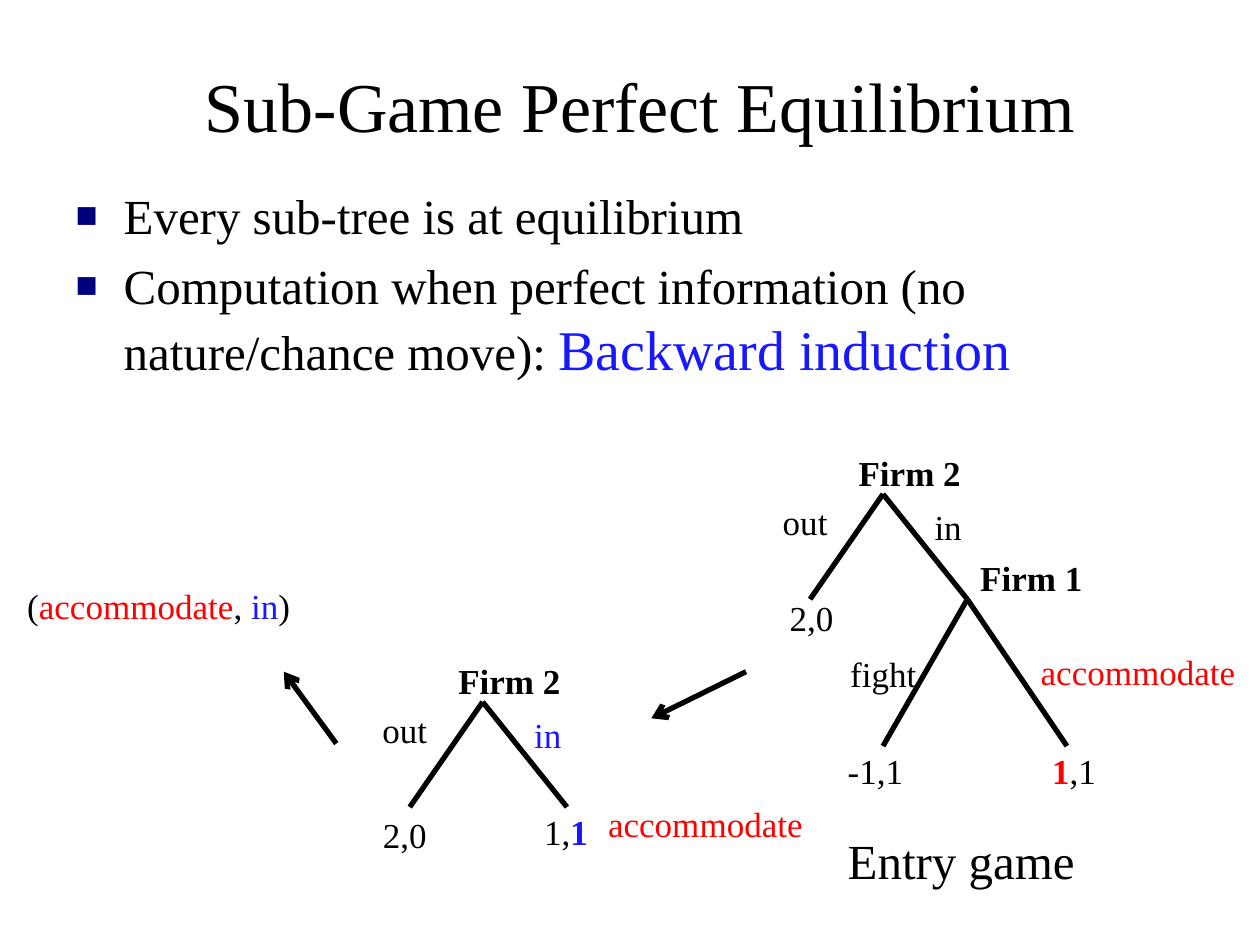
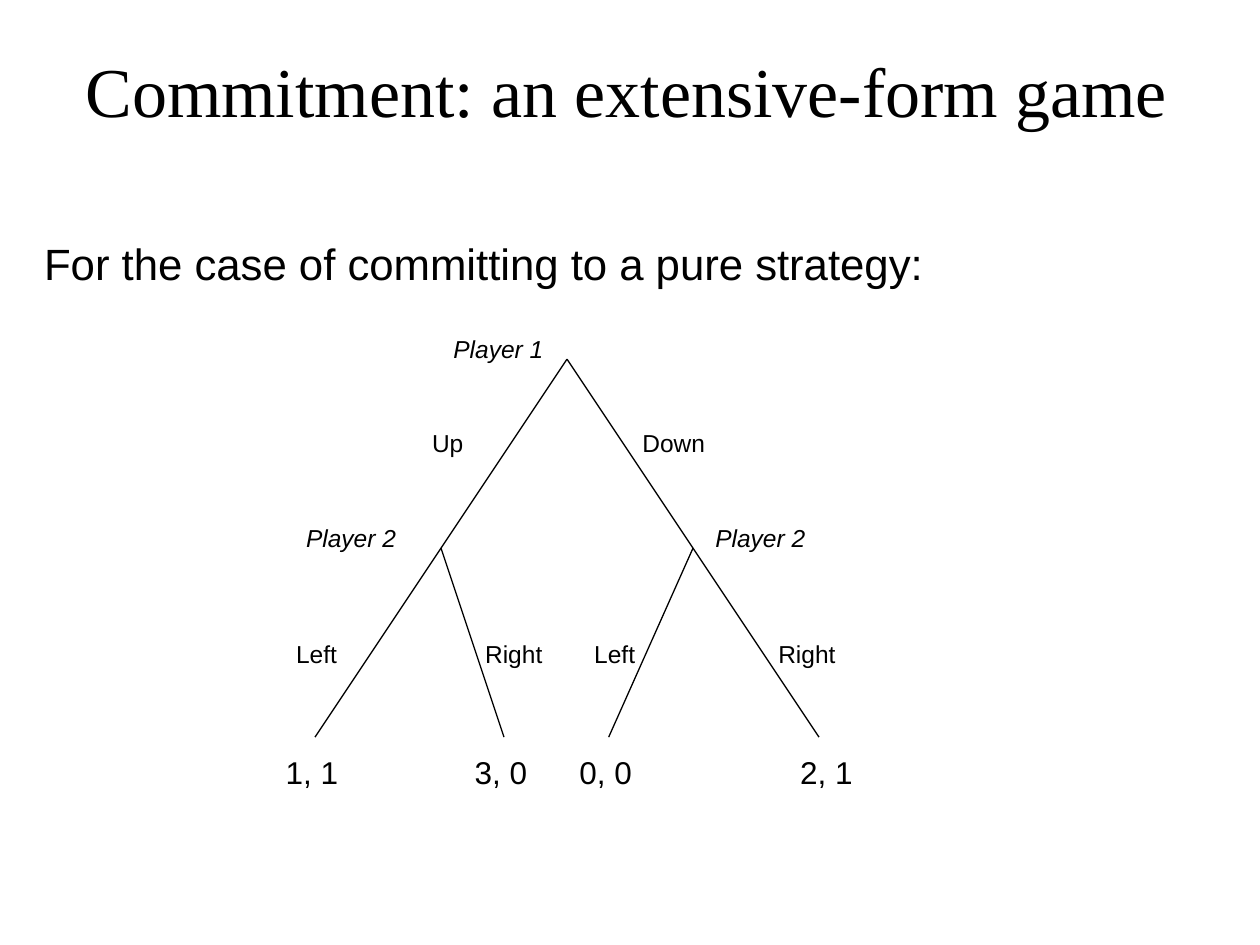
"""Build two slides on game trees: backward induction and commitment."""
from dataclasses import dataclass

from lxml import etree
from pptx import Presentation
from pptx.dml.color import RGBColor
from pptx.enum.shapes import MSO_CONNECTOR
from pptx.enum.text import MSO_ANCHOR, MSO_AUTO_SIZE, PP_ALIGN
from pptx.oxml.ns import qn
from pptx.util import Cm, Pt

STRAIGHT = MSO_CONNECTOR.STRAIGHT
MIDDLE, TOP = MSO_ANCHOR.MIDDLE, MSO_ANCHOR.TOP
LEFT, CENTER = PP_ALIGN.LEFT, PP_ALIGN.CENTER
NO_FIT = MSO_AUTO_SIZE.NONE


@dataclass(frozen=True)
class Theme:
    serif = "Times New Roman"
    sans = "Arial"
    black = "000000"
    red = "FF0000"
    blue = "1818FF"
    navy = "00007D"
    thick = 3
    thin = 0.75


THEME = Theme()
TITLE = {"name": THEME.serif, "size": Pt(40)}
BODY = {"name": THEME.serif, "size": Pt(28)}
TREE = {"name": THEME.serif, "size": Pt(20)}
STATEMENT = {"name": THEME.sans, "size": Pt(25)}
ACTION = {"name": THEME.sans, "size": Pt(14)}
PLAYER = {**ACTION, "italic": True}
PAYOFF = {"name": THEME.sans, "size": Pt(18)}
RED, BLUE, BOLD = {"color": THEME.red}, {"color": THEME.blue}, {"bold": True}

EQUILIBRIUM_TITLE = "Sub-Game Perfect Equilibrium"
EQUILIBRIUM_POINTS = [
    [("Every sub-tree is at equilibrium", {})],
    [("Computation when perfect information (no nature/chance move): ", {}),
     ("Backward induction", {**BLUE, "size": Pt(32)})],
]
FULL_ROOT, REDUCED_ROOT = (17.8, 9.96), (9.73, 14.15)
FIRM_1_NODE = (19.5, 12.08)
OUT_STEP, IN_STEP = (-1.47, 2.12), (1.7, 2.12)
FIGHT_STEP, ACCOMMODATE_STEP = (-1.7, 2.96), (2.01, 2.96)
ENTRY_LABELS = [
    ([("Firm 1", BOLD)], 19.51, 11.1, 2.59),
    ([("fight", {})], 16.89, 13.03, 1.85),
    ([("accommodate", RED)], 20.73, 12.98, 4.47),
    ([("2,0", {})], 15.67, 11.91, 1.4),
    ([("-1,1", {})], 16.84, 14.99, 1.65),
    ([("1", {**RED, **BOLD}), (",1", {})], 20.96, 14.99, 1.4),
    ([("2,0", {})], 7.47, 16.28, 1.4),
    ([("1,", {}), ("1", {**BLUE, **BOLD})], 10.72, 16.21, 1.4),
    ([("accommodate", RED)], 12.01, 16.05, 4.47),
    ([("(", {}), ("accommodate", RED), (", ", {}), ("in", BLUE), (")", {})],
     0.3, 11.66, 5.84),
]
INDUCTION_ARROWS = [((15.04, 13.54), (13.13, 14.48)),
                    ((6.78, 14.99), (5.72, 13.54))]

COMMITMENT_TITLE = "Commitment: an extensive-form game"
COMMITMENT_STATEMENT = "For the case of committing to a pure strategy:"
COMMITMENT_ROOT = (11.43, 7.24)
LEVEL_HEIGHT = 3.81
COMMITMENT_TREE = {8.89: (6.35, 10.16), 13.97: (12.27, 16.51)}
COMMITMENT_ROWS = [
    (PLAYER, 6.6, 2.54, [("Player 1", 8.89)]),
    (ACTION, 8.51, 1.9, [("Up", 8.46), ("Down", 12.7)]),
    (PLAYER, 10.41, 2.54, [("Player 2", 5.92), ("Player 2", 14.17)]),
    (ACTION, 12.75, 1.9, [("Left", 5.72), ("Right", 9.53),
                          ("Left", 11.73), ("Right", 15.44)]),
    (PAYOFF, 15.06, 2.54, [("1, 1", 5.51), ("3, 0", 9.32),
                           ("0, 0", 11.43), ("2, 1", 15.88)]),
]


def set_attributes(target, values):
    for name, value in values.items():
        setattr(target, name, value)


def place(shape, left, top, width, height):
    set_attributes(shape, {"left": Cm(left), "top": Cm(top),
                           "width": Cm(width), "height": Cm(height)})


def write(paragraph, runs, style):
    for text, changes in runs:
        values = {"color": THEME.black, **style, **changes}
        run = paragraph.add_run()
        run.text = text
        run.font.color.rgb = RGBColor.from_string(values.pop("color"))
        set_attributes(run.font, values)


def add_title(slide, text, box, alignment):
    title = slide.shapes.title
    place(title, *box)
    set_attributes(title.text_frame, {"auto_size": NO_FIT, "vertical_anchor": MIDDLE})
    paragraph = title.text_frame.paragraphs[0]
    paragraph.alignment = alignment
    write(paragraph, [(text, {})], TITLE)


def add_bullet(paragraph):
    properties = paragraph._p.get_or_add_pPr()
    properties.set("marL", str(Cm(0.97)))
    properties.set("indent", str(-Cm(0.97)))
    colour = etree.SubElement(properties, qn("a:buClr"))
    etree.SubElement(colour, qn("a:srgbClr"), val=THEME.navy)
    etree.SubElement(properties, qn("a:buSzPct"), val="75000")
    etree.SubElement(properties, qn("a:buChar"), char="■")


def add_bullets(slide, points, box):
    body = slide.placeholders[1]
    place(body, *box)
    frame = body.text_frame
    set_attributes(frame, {"auto_size": NO_FIT, "vertical_anchor": TOP})
    for index, runs in enumerate(points):
        paragraph = frame.add_paragraph() if index else frame.paragraphs[0]
        add_bullet(paragraph)
        write(paragraph, runs, BODY)


def add_label(slide, runs, left, top, width, height=1.12, style=TREE, wrap=False):
    box = slide.shapes.add_textbox(Cm(left), Cm(top), Cm(width), Cm(height))
    box.text_frame.word_wrap = wrap
    paragraph = box.text_frame.paragraphs[0]
    write(paragraph, runs, style)
    return paragraph


def add_line(slide, start, end, weight, arrow=False):
    line = slide.shapes.add_connector(STRAIGHT, *map(Cm, (*start, *end)))
    line.line.width = Pt(weight)
    line.line.color.rgb = RGBColor.from_string(THEME.black)
    if arrow:
        etree.SubElement(line.line._get_or_add_ln(), qn("a:tailEnd"), type="arrow")
    etree.SubElement(line._element.spPr, qn("a:effectLst"))


def add_branches(slide, node, steps):
    for across, down in steps:
        add_line(slide, node, (node[0] + across, node[1] + down), THEME.thick)


def add_entry_choice(slide, root, in_style):
    left, top = root
    add_branches(slide, root, (OUT_STEP, IN_STEP))
    add_label(slide, [("Firm 2", BOLD)], left - 0.74, top - 0.98, 2.59)
    add_label(slide, [("out", {})], left - 2.27, top, 1.42)
    add_label(slide, [("in", in_style)], left + 0.79, top + 0.1, 1.07)


def build_equilibrium(presentation):
    slide = presentation.slides.add_slide(presentation.slide_layouts[1])
    add_title(slide, EQUILIBRIUM_TITLE, (1.47, 0.2, 22.86, 3.81), CENTER)
    add_bullets(slide, EQUILIBRIUM_POINTS, (1.27, 3.61, 22.86, 11.86))
    add_entry_choice(slide, FULL_ROOT, {})
    add_entry_choice(slide, REDUCED_ROOT, BLUE)
    add_branches(slide, FIRM_1_NODE, (FIGHT_STEP, ACCOMMODATE_STEP))
    for label in ENTRY_LABELS:
        add_label(slide, *label)
    add_label(slide, [("Entry game", {})], 16.84, 16.61, 5.13, 1.45, BODY)
    for start, end in INDUCTION_ARROWS:
        add_line(slide, start, end, THEME.thick, arrow=True)


def build_commitment(presentation):
    slide = presentation.slides.add_slide(presentation.slide_layouts[5])
    add_title(slide, COMMITMENT_TITLE, (1.47, 0.64, 22.43, 2.34), LEFT)
    statement = add_label(slide, [(COMMITMENT_STATEMENT, {})],
                          0.64, 4.39, 23.29, 2.34, STATEMENT, wrap=True)
    set_attributes(statement, {"line_spacing": 1.24, "space_before": Pt(8.1)})
    middle = COMMITMENT_ROOT[1] + LEVEL_HEIGHT
    for node, leaves in COMMITMENT_TREE.items():
        add_line(slide, COMMITMENT_ROOT, (node, middle), THEME.thin)
        for leaf in leaves:
            add_line(slide, (node, middle), (leaf, middle + LEVEL_HEIGHT), THEME.thin)
    for style, top, width, labels in COMMITMENT_ROWS:
        for text, left in labels:
            add_label(slide, [(text, {})], left, top, width, 0.86, style, wrap=True)


def main():
    presentation = Presentation()
    set_attributes(presentation, {"slide_width": Cm(25.4), "slide_height": Cm(19.05)})
    build_equilibrium(presentation)
    build_commitment(presentation)
    presentation.save("out.pptx")


if __name__ == "__main__":
    main()
